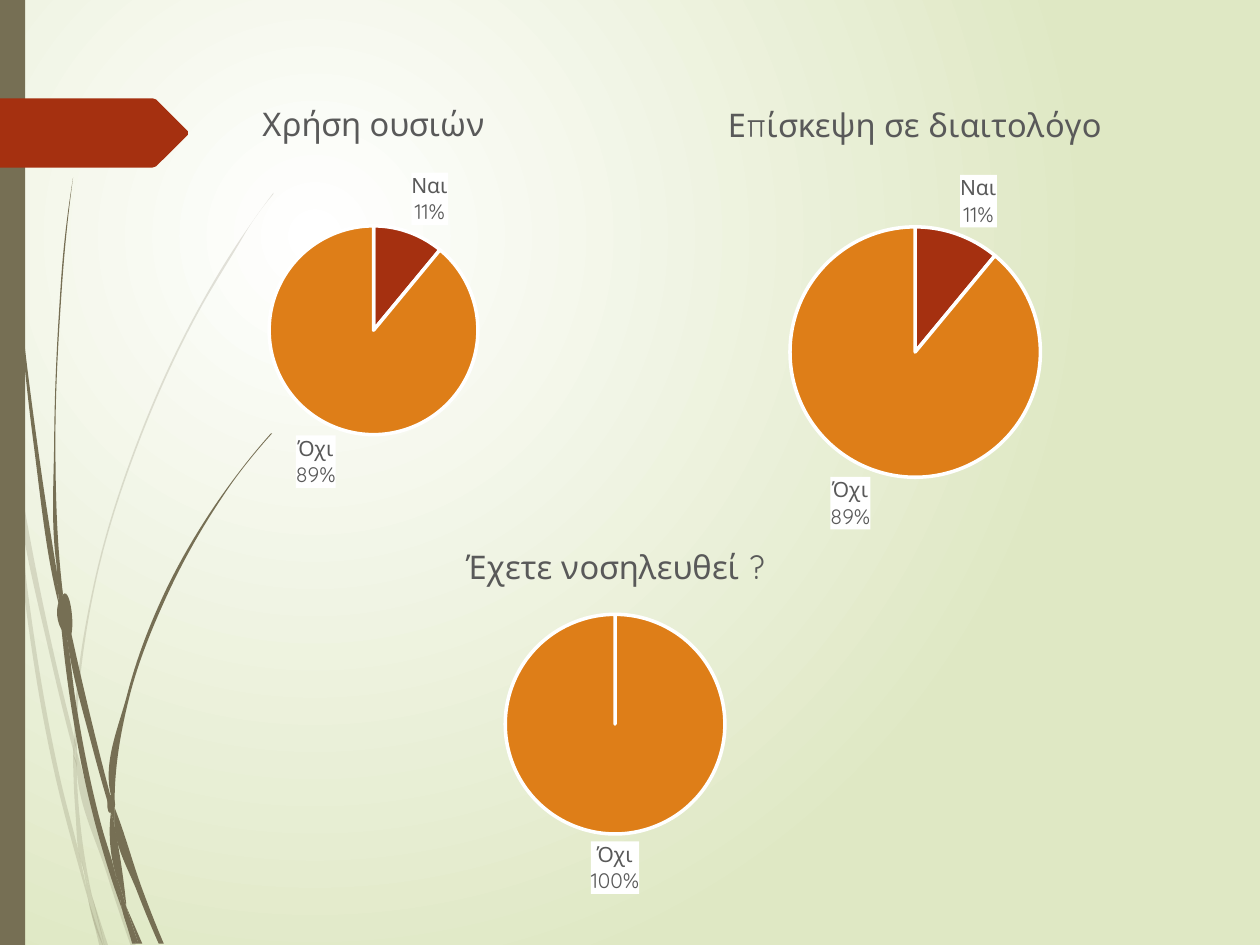
import math

import pptx
import pptx.chart.data
import pptx.dml.color
import pptx.enum.chart
import pptx.enum.shapes
import pptx.util
from pptx.oxml import parse_xml
from pptx.oxml.ns import nsdecls, qn

# Content: title, values, frame (left, top, width, height), pie (centre x, centre y, diameter), in cm
CATEGORIES = ["Ναι", "Όχι"]
CHARTS = [
    ("Χρήση ουσιών", (11, 89), (1.3, 1.58), (12.47, 8.64), (7.53, 6.66, 4.21)),
    ("Επίσκεψη σε διαιτολόγο", (11, 89), (12.3, 1.58), (12.29, 9.47), (18.45, 7.1, 5.05)),
    ("Έχετε νοσηλευθεί ?", (0, 100), (6.27, 10.53), (12.27, 7.85), (12.4, 14.6, 4.43)),
]

FONT = "Quicksand"
TEXT, WHITE, OLIVE, RED, ORANGE, GREEN = "595959", "FFFFFF", "766F54", "A53010", "DE7E18", "DFE8C4"

# Grass blades: each has two sides, drawn down one and back along the other (inches)
PALE_BLADES = [
    ([(.08, 3.5), (.06, 3.22), (0, 2.82)], [(0, 2.99), (.07, 3.44), (.08, 3.5)]),
    ([(.1, 3.45), (.12, 3.76), (.4, 5.22), (.59, 5.99)], [(.59, 5.86), (.43, 5.2), (.1, 3.45)]),
    ([(.61, 5.96), (.61, 6.1), (.85, 6.94), (1.04, 7.51)],
     [(1.08, 7.51), (.88, 6.92), (.64, 6.07), (.61, 5.96)]),
    ([(.73, 7.11), (.83, 7.51)], [(.86, 7.51), (.73, 7.11)]),
    ([(.08, 3.5), (.19, 4.7), (.45, 6.21), (.64, 6.93), (.7, 7.14)],
     [(.69, 7.07), (.64, 6.83), (.48, 6.19), (.22, 4.69), (.12, 3.76), (.08, 3.5)]),
    ([(.58, 5.99), (.6, 6.46), (.64, 6.83), (.67, 6.92), (.73, 7.11)],
     [(.72, 7.06), (.63, 6.46), (.61, 6.1), (.61, 6.08), (.58, 5.99)]),
    ([(.61, 5.96), (.61, 5.84), (.76, 4.62), (1.11, 3.49), (1.59, 2.45), (1.87, 1.98),
      (2.01, 1.75), (2.17, 1.54)],
     [(2.17, 1.53), (2.01, 1.75), (1.86, 1.97), (1.58, 2.44), (1.1, 3.48), (.75, 4.61),
      (.59, 5.84), (.59, 5.86), (.61, 5.96)]),
    ([(.7, 7.14), (.79, 7.51)], [(.82, 7.51), (.7, 7.14)]),
    ([(.61, 6.08), (.61, 6.1), (.61, 5.96), (.59, 5.86)], [(.58, 5.99), (.61, 6.08)]),
    ([(.65, 6.83), (.69, 7.07), (.7, 7.14), (.82, 7.51)],
     [(.83, 7.51), (.73, 7.11), (.67, 6.92), (.65, 6.83)]),
]
DARK_BLADES = [
    ([(.02, 0), (.03, .48), (.05, 1.1), (.14, 2.33), (.27, 3.55), (.46, 4.77), (.47, 4.81)],
     [(.45, 4.53), (.3, 3.55), (.15, 2.32), (.06, 1.09), (.04, .48), (.03, 0)]),
    ([(.5, 4.72), (.53, 5.05), (.73, 5.92), (.88, 6.45)], [(.88, 6.33), (.77, 5.9), (.5, 4.72)]),
    ([(.91, 6.41), (.91, 6.56), (1.09, 7.08), (1.26, 7.49)],
     [(1.3, 7.49), (1.13, 7.06), (.94, 6.49), (.91, 6.41)]),
    ([(.47, 4.77), (.56, 5.57), (.77, 6.59), (.92, 7.08), (.97, 7.22)],
     [(.96, 7.17), (.91, 6.91), (.81, 6.57), (.6, 5.56), (.53, 5.05), (.47, 4.77)]),
    ([(.5, 4.72), (.48, 4.53), (.44, 3.49), (.48, 2.45), (.52, 1.93), (.58, 1.41)],
     [(.58, 1.41), (.51, 1.93), (.47, 2.45), (.43, 3.49), (.45, 4.49), (.49, 4.72)]),
    ([(1, 7.19), (1.1, 7.49)], [(1.13, 7.49), (1, 7.19)]),
    ([(.47, 4.77), (.53, 5.05), (.5, 4.72)], [(.49, 4.72), (.45, 4.49), (.45, 4.53), (.47, 4.77)]),
    ([(.91, 6.41), (.91, 6.33), (1.03, 5.52), (1.31, 4.76), (1.69, 4.06), (1.91, 3.74),
      (2.03, 3.59), (2.16, 3.44)],
     [(2.15, 3.44), (2.03, 3.58), (1.91, 3.73), (1.68, 4.05), (1.29, 4.74), (1.01, 5.51),
      (.88, 6.31), (.91, 6.41)]),
    ([(.97, 7.22), (1.05, 7.49)], [(1.08, 7.49), (.97, 7.22)]),
    ([(.88, 6.45), (.91, 6.91), (.96, 7.06), (1, 7.19)],
     [(1, 7.16), (.91, 6.56), (.9, 6.51), (.88, 6.45)]),
    ([(.88, 6.45), (.9, 6.51), (.91, 6.56)], [(.91, 6.41), (.88, 6.31), (.88, 6.45)]),
    ([(.91, 6.91), (.96, 7.17), (.97, 7.22), (1.08, 7.49)],
     [(1.1, 7.49), (1, 7.19), (.96, 7.06), (.91, 6.91)]),
]
FLAG = [(0, .78), (1.21, .78), (1.24, .79), (1.49, 1.04), (1.49, 1.07), (1.24, 1.32), (1.21, 1.33), (0, 1.33)]


def color(hex_text):
    return pptx.dml.color.RGBColor.from_string(hex_text)


def format_font(font, size, hex_text):
    font.size, font.name, font.bold = pptx.util.Pt(size), FONT, False
    font.color.rgb = color(hex_text)


def write_text(text_frame, text, size, hex_text):
    run = text_frame.paragraphs[0].add_run()
    run.text = text
    format_font(run.font, size, hex_text)


def paint(shape, hex_text, opacity=100):
    shape.shadow.inherit = False
    shape.line.fill.background()
    shape.fill.solid()
    shape.fill.fore_color.rgb = color(hex_text)
    if opacity < 100:
        shape.fill._xPr.find(".//" + qn("a:srgbClr")).append(
            parse_xml(f'<a:alpha {nsdecls("a")} val="{opacity * 1000}"/>'))


def find_directions(points):
    """Angle of the curve at each point; the shorter neighbouring segment counts more."""
    chords = [(math.atan2(y1 - y0, x1 - x0), math.hypot(x1 - x0, y1 - y0) or 1)
              for (x0, y0), (x1, y1) in zip(points, points[1:])]
    inner = [math.atan2(math.sin(a) / m + math.sin(b) / n, math.cos(a) / m + math.cos(b) / n)
             for (a, m), (b, n) in zip(chords, chords[1:])]
    if not inner:
        return [chords[0][0]] * 2
    return [2 * chords[0][0] - inner[0]] + inner + [2 * chords[-1][0] - inner[-1]]


def add_outline(slide, points, hex_text, opacity=100):
    corners = [(pptx.util.Cm(x * 2.54), pptx.util.Cm(y * 2.54)) for x, y in points]
    builder = slide.shapes.build_freeform(*corners[0])
    builder.add_line_segments(corners[1:], close=True)
    shape = builder.convert_to_shape()
    paint(shape, hex_text, opacity)
    return shape


def add_blade(slide, side, way_back, opacity):
    shape = add_outline(slide, side + way_back, OLIVE, opacity)
    outline = shape._element.find(".//" + qn("a:path"))
    lines = outline.findall(qn("a:lnTo"))
    # Bend the lines of each side; the step between the sides stays straight
    for points, first in ((side, 0), (way_back, len(side))):
        directions = find_directions(points)
        for i in range(len(points) - 1):
            line = lines[first + i]
            reach = math.dist(points[i], points[i + 1]) / 3
            controls = ((points[i], directions[i], reach), (points[i + 1], directions[i + 1], -reach))
            marks = "".join(
                f'<a:pt x="{pptx.util.Cm((x + r * math.cos(angle)) * 2.54) - shape.left}"'
                f' y="{pptx.util.Cm((y + r * math.sin(angle)) * 2.54) - shape.top}"/>'
                for (x, y), angle, r in controls)
            curve = parse_xml(f'<a:cubicBezTo {nsdecls("a")}>{marks}</a:cubicBezTo>')
            curve.append(line[0])
            outline.replace(line, curve)
    return shape


def add_decoration(slide):
    """Grass, side bar and flag, kept on the slide master."""
    parts = []
    for blades, opacity in ((PALE_BLADES, 20), (DARK_BLADES, 100)):
        shapes = [add_blade(slide, side, way_back, opacity) for side, way_back in blades]
        parts.append(slide.shapes.add_group_shape(shapes))
    bar = slide.shapes.add_shape(pptx.enum.shapes.MSO_SHAPE.RECTANGLE, 0, 0,
                                 pptx.util.Cm(0.51), pptx.util.Cm(19.05))
    paint(bar, OLIVE)
    parts += [bar, add_outline(slide, FLAG, RED)]
    tree = slide.slide_layout.slide_master.shapes._spTree
    for part in parts:
        for properties in part._element.iter(qn("p:cNvPr")):
            properties.set("id", str(int(properties.get("id")) + 100))
        tree.append(part._element)


def set_background(slide):
    fill = slide.background.fill
    fill.gradient()
    for stop, position, hex_text in zip(fill.gradient_stops, (0, 1), (WHITE, GREEN)):
        stop.position, stop.color.rgb = position, color(hex_text)
    gradient = slide.element.find(".//" + qn("a:gradFill"))
    gradient.replace(gradient.find(qn("a:lin")), parse_xml(
        f'<a:path {nsdecls("a")} path="circle">'
        '<a:fillToRect l="50000" t="50000" r="100000" b="100000"/></a:path>'))


def add_pie(slide, title, values, corner, size, pie):
    data = pptx.chart.data.CategoryChartData()
    data.categories = CATEGORIES
    data.add_series(title, values)
    frame = [pptx.util.Cm(length) for length in corner + size]
    chart = slide.shapes.add_chart(pptx.enum.chart.XL_CHART_TYPE.PIE, *frame, data).chart
    format_font(chart.font, 10, "000000")
    chart.has_legend, chart.has_title = False, True
    write_text(chart.chart_title.text_frame, title, 18.6, TEXT)

    # Slices
    chart.plots[0].vary_by_categories = True
    series = chart.plots[0].series[0]
    for i, hex_text in enumerate((RED, ORANGE)):
        slice_format = series.points[i].format
        slice_format.fill.solid()
        slice_format.fill.fore_color.rgb = color(hex_text)
        slice_format.line.color.rgb = color(WHITE)
        slice_format.line.width = pptx.util.Pt(2)

    # White labels with category and percentage; none on an empty slice
    labels = series.data_labels
    labels.show_value = False
    labels.show_category_name = labels.show_percentage = True
    labels.position = pptx.enum.chart.XL_LABEL_POSITION.OUTSIDE_END
    format_font(labels.font, 12, TEXT)
    element = labels._element
    element.find(qn("c:txPr")).addprevious(parse_xml(
        f'<c:spPr {nsdecls("c", "a")}><a:solidFill><a:srgbClr val="{WHITE}"/></a:solidFill></c:spPr>'))
    if 0 in values:
        element.insert(0, parse_xml(f'<c:dLbl {nsdecls("c")}><c:idx val="{values.index(0)}"/>'
                                    '<c:delete val="1"/></c:dLbl>'))

    # Place the pie inside its frame
    *center, diameter = pie
    places = "".join(
        f'<c:{edge} val="{(middle - diameter / 2 - start) / length:.4f}"/>'
        for edge, middle, start, length in zip("xy", center, corner, size))
    places += "".join(f'<c:{side} val="{diameter / length:.4f}"/>' for side, length in zip("wh", size))
    area = chart._chartSpace.find(".//" + qn("c:plotArea"))
    for old_layout in area.findall(qn("c:layout")):
        area.remove(old_layout)
    area.insert(0, parse_xml(
        f'<c:layout {nsdecls("c")}><c:manualLayout><c:layoutTarget val="inner"/>'
        f'<c:xMode val="edge"/><c:yMode val="edge"/>{places}</c:manualLayout></c:layout>'))


presentation = pptx.Presentation()
presentation.slide_width, presentation.slide_height = pptx.util.Cm(25.4), pptx.util.Cm(19.05)
slide = presentation.slides.add_slide(presentation.slide_layouts[6])
set_background(slide)
add_decoration(slide)
for chart in CHARTS:
    add_pie(slide, *chart)
presentation.save("out.pptx")
